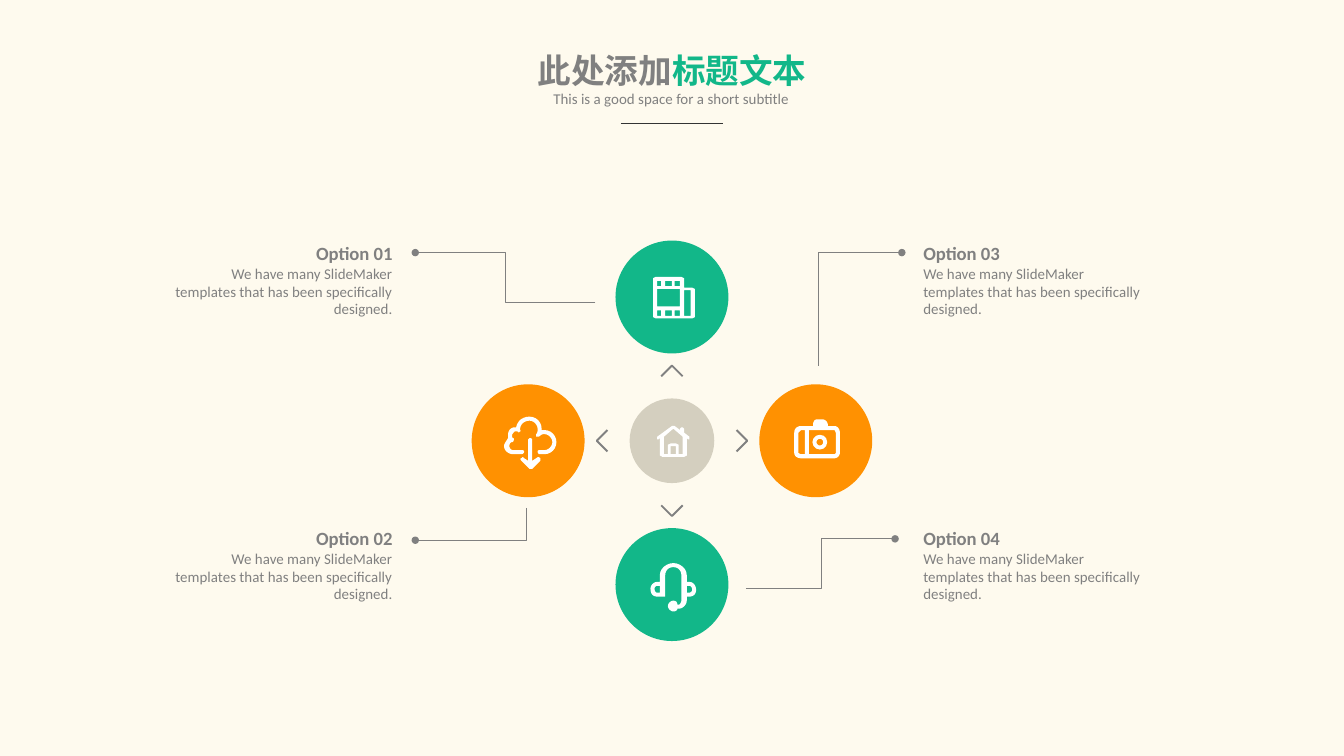
from lxml.etree import SubElement
from pptx import Presentation
from pptx.dml.color import RGBColor
from pptx.enum.shapes import MSO_CONNECTOR as Connector, MSO_SHAPE as Preset
from pptx.enum.text import MSO_ANCHOR as Anchor, MSO_AUTO_SIZE as AutoSize, PP_ALIGN as Align
from pptx.oxml.ns import qn
from pptx.util import Inches, Pt

GREEN, ORANGE, GREY, WHITE = "12B789", "FF9101", "808080", "FFFFFF"
UNIT = 0.01
BODY = "We have many SlideMaker templates that has been specifically designed."

FILM = [
    [(2, 0), (21, 0), (23, 1), (23, 8), (29, 8), (31, 9), (31, 30), (29, 31), (2, 31), (0, 30), (0, 1)],
    *[[(left, top), (right, top), (right, top + 4), (left, top + 4)]
      for left, right in ((3, 6), (9, 14), (16, 20)) for top in (3, 25)],
    [(3, 9), (20, 9), (20, 22), (3, 22)],
    [(23, 10), (28, 10), (28, 29), (23, 29)],
]
CLOUD = [[
    (30, 10), (28, 10), (28, 9), (28, 4, 24, 0, 19, 0), (14, 0, 10, 3, 9, 8), (7, 8),
    (4, 9, 3, 11, 3, 14), (3, 16), (2, 18, 0, 20, 0, 22), (0, 25, 3, 28, 7, 28), (13, 28),
    (14, 28, 15, 27, 15, 26), (15, 25, 14, 25, 13, 25), (7, 25), (5, 25, 4, 23, 4, 22),
    (4, 20, 5, 19, 6, 19), (7, 19, 7, 18, 7, 18), (8, 17, 7, 16, 7, 16), (6, 16, 6, 15, 6, 14),
    (6, 13, 7, 12, 8, 11), (10, 11), (11, 12, 11, 12, 12, 11), (12, 11, 13, 11, 12, 10),
    (12, 9), (12, 6, 15, 3, 19, 3), (22, 3, 25, 6, 25, 9), (25, 11, 25, 12, 24, 13),
    (24, 13, 24, 14, 24, 15), (26, 15), (27, 14, 28, 13, 30, 13), (33, 13, 36, 16, 36, 19),
    (36, 22, 33, 25, 30, 25), (26, 25), (26, 25, 25, 25, 25, 26), (25, 27, 26, 28, 26, 28),
    (30, 28), (35, 28, 39, 24, 39, 19), (39, 14, 35, 10, 30, 10),
]]
DOWNLOAD = [[
    (12, 15), (9, 17), (9, 1), (8, 0), (7, 0), (6, 1), (6, 17), (3, 15), (2, 14, 2, 14, 1, 15),
    (0, 15, 0, 16, 1, 17), (7, 23), (9, 23), (15, 17), (15, 15), (14, 14, 13, 14, 12, 15),
]]
HEADSET = [
    [(29, 14), (27, 14), (27, 9), (27, 4, 22, 0, 17, 0), (12, 0, 7, 4, 7, 9), (7, 14), (5, 14),
     (2, 14, 0, 17, 0, 19), (0, 23, 2, 25, 5, 25), (11, 25), (11, 9), (11, 6, 13, 3, 17, 3),
     (21, 3, 23, 6, 23, 9), (23, 28), (23, 29, 22, 31, 21, 31), (20, 31), (20, 29, 19, 28, 17, 28),
     (15, 28, 13, 30, 13, 32), (13, 34, 15, 36, 17, 36), (19, 36, 20, 35, 20, 34), (21, 34),
     (24, 34, 27, 31, 27, 28), (27, 25), (29, 25), (32, 25, 34, 23, 34, 20), (34, 17, 32, 14, 29, 14)],
    [(7, 22), (5, 22), (4, 22, 3, 21, 3, 19), (3, 18, 4, 17, 5, 17), (7, 17)],
    [(29, 22), (27, 22), (27, 17), (29, 17), (30, 17, 31, 18, 31, 20), (31, 21, 30, 22, 29, 22)],
]
CAMERA = [
    [(30, 5), (25, 5), (25, 4), (25, 2, 23, 0, 21, 0), (17, 0), (15, 0, 14, 2, 14, 4), (14, 5), (5, 5),
     (2, 5, 0, 7, 0, 10), (0, 25), (0, 27, 2, 29, 5, 29), (30, 29), (32, 29, 34, 27, 34, 25),
     (34, 10), (34, 7, 32, 5, 30, 5)],
    [(3, 25), (3, 10), (5, 8), (8, 8), (8, 26), (5, 26)],
    [(31, 25), (30, 26), (11, 26), (11, 8), (30, 8), (31, 10)],
]
HOUSE = [
    [(25, 8), (21, 5), (21, 2), (20, 1), (19, 1), (18, 2), (18, 3), (14, 0), (12, 0), (1, 8), (1, 10),
     (2, 10), (3, 9), (3, 22), (5, 23), (21, 23), (23, 22), (23, 9), (24, 10), (25, 10)],
    [(11, 21), (11, 15), (15, 15), (15, 21)],
    [(20, 21), (17, 21), (17, 14), (15, 13), (11, 13), (9, 14), (9, 21), (6, 21), (6, 8), (13, 2), (20, 8)],
]


def color(value):
    """Turn a hex string into a colour."""
    return RGBColor.from_string(value)


def paint(shape, fill=None, line=None, width=0.5, alpha=None):
    """Set fill and outline, and drop the shadow."""
    shape.shadow.inherit = False
    if fill:
        shape.fill.solid()
        shape.fill.fore_color.rgb = color(fill)
        if alpha:
            tint = shape._element.spPr.find(qn("a:solidFill"))[0]
            SubElement(tint, qn("a:alpha"), val=str(alpha * 1000))
    else:
        shape.fill.background()
    if line:
        shape.line.color.rgb = color(line)
        shape.line.width = Pt(width)
    else:
        shape.line.fill.background()


def place(shape, left, top, width, height):
    """Move a shape to a box in inches."""
    shape.left, shape.top, shape.width, shape.height = map(Inches, (left, top, width, height))


def write(paragraph, text, size=8, tint=GREY, bold=False, align=Align.LEFT):
    """Add a formatted run to a paragraph."""
    paragraph.alignment = align
    run = paragraph.add_run()
    run.text = text
    run.font.name, run.font.size, run.font.bold = "Calibri", Pt(size), bold
    run.font.color.rgb = color(tint)


def flatten(contour, steps=6):
    """Replace each cubic curve of a contour by short straight steps."""
    points = [contour[0]]
    for item in contour[1:]:
        if len(item) == 2:
            points.append(item)
            continue
        nodes = [points[-1], item[:2], item[2:4], item[4:]]
        for step in range(1, steps + 1):
            t = step / steps
            weights = ((1 - t) ** 3, 3 * t * (1 - t) ** 2, 3 * t * t * (1 - t), t ** 3)
            points.append(tuple(sum(w * node[axis] for w, node in zip(weights, nodes)) for axis in (0, 1)))
    return points


def draw_outline(slide, left, top, contours, scale=1, close=True):
    """Build a freeform from contours measured from a corner point."""
    builder = None
    for contour in contours:
        points = [(Inches(left + x * scale), Inches(top + y * scale)) for x, y in flatten(contour)]
        if builder is None:
            builder = slide.shapes.build_freeform(*points[0])
        else:
            builder.move_to(*points[0])
        builder.add_line_segments(points[1:], close=close)
    return builder.convert_to_shape()


def add_icon(slide, left, top, contours):
    """Draw a white icon."""
    paint(draw_outline(slide, left, top, contours, scale=UNIT), WHITE)


def add_circle(slide, x, y, diameter, fill, alpha=None, preset=Preset.OVAL):
    """Draw a round shape about its centre."""
    shape = slide.shapes.add_shape(preset, 0, 0, 0, 0)
    place(shape, x - diameter / 2, y - diameter / 2, diameter, diameter)
    paint(shape, fill, alpha=alpha)
    return shape


def add_header(slide, center, top):
    """Place the two-colour title, the subtitle and the rule."""
    title = slide.shapes.title
    place(title, center - 1.12, top, 2.24, 0.4)
    subtitle = slide.shapes.add_textbox(0, 0, 0, 0)
    place(subtitle, center - 0.99, top + 0.3, 1.97, 0.24)
    for shape in (title, subtitle):
        shape.text_frame.word_wrap = False
        shape.text_frame.auto_size = AutoSize.SHAPE_TO_FIT_TEXT
        shape.text_frame.vertical_anchor = Anchor.TOP
    heading = title.text_frame.paragraphs[0]
    write(heading, "此处添加", size=18, bold=True, align=Align.CENTER)
    write(heading, "标题文本", size=18, tint=GREEN, bold=True, align=Align.CENTER)
    write(subtitle.text_frame.paragraphs[0], "This is a good space for a short subtitle", align=Align.CENTER)
    ends = [Inches(value) for value in (center - 0.38, top + 0.6, center + 0.38, top + 0.6)]
    rule = slide.shapes.add_connector(Connector.STRAIGHT, *ends)
    rule.line.color.rgb, rule.line.width = color("333333"), Pt(0.5)
    SubElement(rule._element.spPr, qn("a:effectLst"))


def add_hub(slide, x, y, reach=1.07):
    """Draw the home circle with four circles and chevrons around it."""
    add_circle(slide, x, y, 0.63, "2E2403", alpha=20)
    for dx, dy, fill in ((0, -1, GREEN), (1, 0, ORANGE), (-1, 0, ORANGE), (0, 1, GREEN)):
        add_circle(slide, x + dx * reach, y + dy * reach, 0.84, fill)
        chevron = [(0.48 * dx + side * dy, 0.48 * dy + side * dx) for side in (-0.08, 0.08)]
        chevron.insert(1, (0.56 * dx, 0.56 * dy))
        paint(draw_outline(slide, x, y, [chevron], close=False), line=GREY, width=1)
    add_icon(slide, x - 0.12, y - 0.11, HOUSE)
    add_icon(slide, x - 0.14, y - reach - 0.15, FILM)
    add_icon(slide, x - reach - 0.18, y - 0.18, CLOUD)
    add_icon(slide, x - reach - 0.06, y - 0.02, DOWNLOAD)
    add_icon(slide, x - 0.16, y + reach - 0.16, HEADSET)
    add_icon(slide, x + reach - 0.16, y - 0.16, CAMERA)
    lens = add_circle(slide, x + reach + 0.03, y + 0.01, 0.11, WHITE, preset=Preset.DONUT)
    lens.adjustments[0] = 0.27


def add_option(slide, left, top, name, align, leader):
    """Write one option and draw its leader, measured from the box corner."""
    box = slide.shapes.add_textbox(0, 0, 0, 0)
    place(box, left, top, 1.65, 0.57)
    frame = box.text_frame
    frame.word_wrap, frame.auto_size = True, AutoSize.SHAPE_TO_FIT_TEXT
    frame.margin_left = frame.margin_top = frame.margin_right = frame.margin_bottom = 0
    write(frame.paragraphs[0], name, size=10, bold=True, align=align)
    write(frame.add_paragraph(), BODY, align=align)
    line = draw_outline(slide, left, top, [leader], close=False)
    paint(line, line=GREY)
    SubElement(line._element.spPr.find(qn("a:ln")), qn("a:tailEnd"), type="oval", w="sm", len="sm")


def main():
    """Build and save the slide."""
    presentation = Presentation()
    presentation.slide_width, presentation.slide_height = Inches(10), Inches(10 * 9 / 16)
    slide = presentation.slides.add_slide(presentation.slide_layouts[5])
    slide.background.fill.solid()
    slide.background.fill.fore_color.rgb = color("FEFAEE")
    add_header(slide, 5, 0.32)
    add_hub(slide, 5, 3.28)
    left, right, upper, lower = 1.27, 6.87, 1.8, 3.92
    add_option(slide, left, upper, "Option 01", Align.RIGHT, [(3.16, 0.45), (2.49, 0.45), (2.49, 0.08), (1.82, 0.08)])
    add_option(slide, left, lower, "Option 02", Align.RIGHT, [(2.65, -0.14), (2.65, 0.1), (1.82, 0.1)])
    add_option(slide, right, upper, "Option 03", Align.LEFT, [(-0.78, 0.92), (-0.78, 0.08), (-0.16, 0.08)])
    add_option(slide, right, lower, "Option 04", Align.LEFT, [(-1.32, 0.46), (-0.76, 0.46), (-0.76, 0.09), (-0.21, 0.09)])
    presentation.save("out.pptx")


if __name__ == "__main__":
    main()
